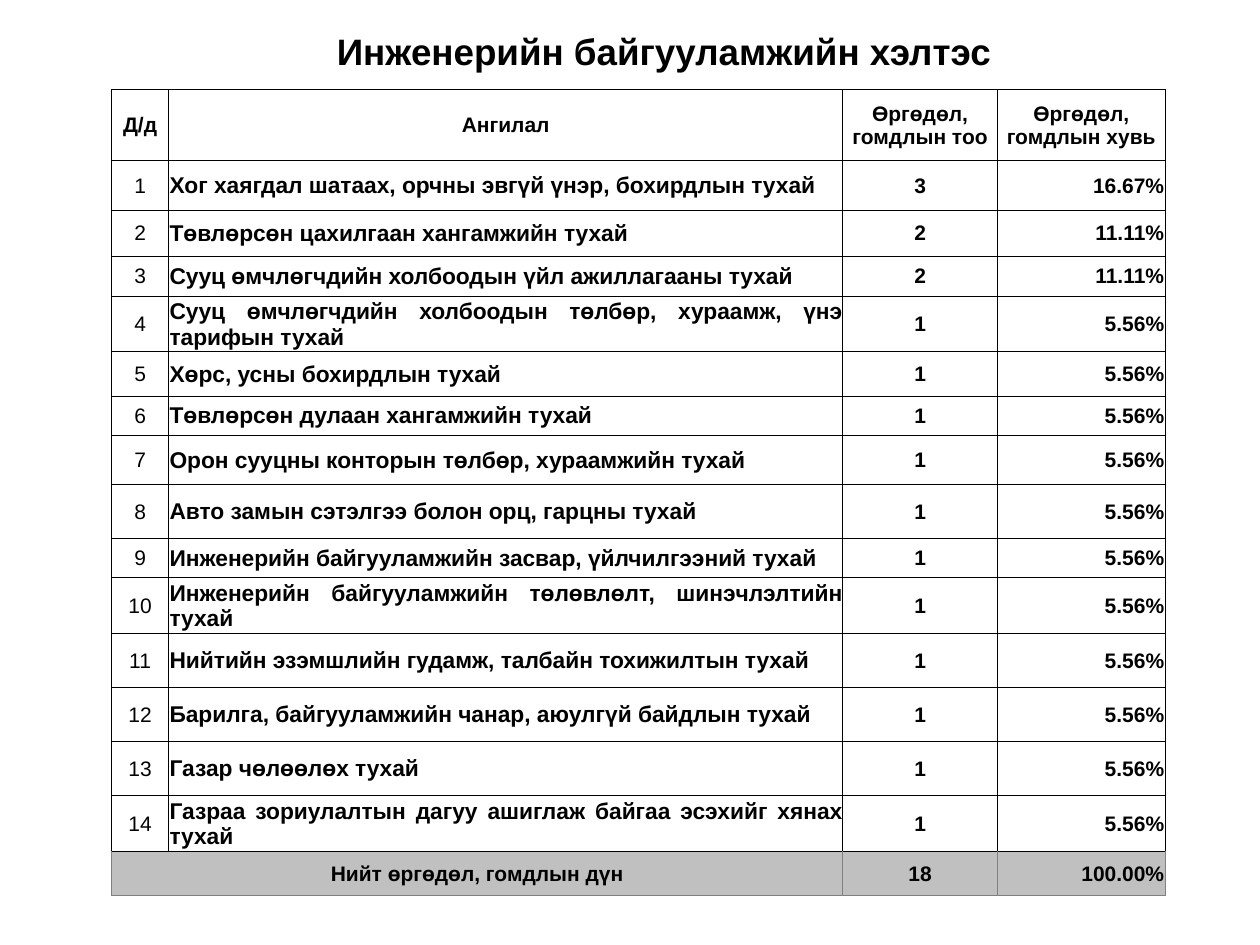
from dataclasses import dataclass

from lxml.etree import SubElement
from pptx import Presentation
from pptx.dml.color import RGBColor as Rgb
from pptx.enum.text import MSO_ANCHOR as Anchor, PP_ALIGN as Align
from pptx.oxml.ns import qn
from pptx.util import Cm, Pt


@dataclass(frozen=True)
class Theme:
    font: str = "Arial"
    text: str = "000000"
    paper: str = "FFFFFF"
    total: str = "C0C0C0"
    total_border: str = "808080"
    border_width: int = Pt(0.5)
    title_size: int = 21
    category_size: int = 13
    cell_size: int = 12


theme = Theme()


def write(paragraph, text, size, bold, alignment):
    paragraph.alignment = alignment
    run = paragraph.add_run()
    run.text = text
    run.font.name = theme.font
    run.font.size = Pt(size)
    run.font.bold = bold
    run.font.color.rgb = Rgb.from_string(theme.text)


def style_cell(cell, fill, border, top):
    properties = cell._tc.get_or_add_tcPr()
    for side, color in (("L", border), ("R", border), ("T", top), ("B", border)):
        line = SubElement(properties, qn(f"a:ln{side}"), w=str(theme.border_width))
        SubElement(SubElement(line, qn("a:solidFill")), qn("a:srgbClr"), val=color)
    cell.fill.solid()
    cell.fill.fore_color.rgb = Rgb.from_string(fill)
    cell.vertical_anchor = Anchor.MIDDLE
    cell.margin_left = cell.margin_right = cell.margin_top = Cm(0.02)
    cell.margin_bottom = 0


headers = ["Д/д", "Ангилал", "Өргөдөл, гомдлын тоо", "Өргөдөл, гомдлын хувь"]
categories = [
    ("Хог хаягдал шатаах, орчны эвгүй үнэр, бохирдлын тухай", 3),
    ("Төвлөрсөн цахилгаан хангамжийн тухай", 2),
    ("Сууц өмчлөгчдийн холбоодын үйл ажиллагааны тухай", 2),
    ("Сууц өмчлөгчдийн холбоодын төлбөр, хураамж, үнэ тарифын тухай", 1),
    ("Хөрс, усны бохирдлын тухай", 1),
    ("Төвлөрсөн дулаан хангамжийн тухай", 1),
    ("Орон сууцны конторын төлбөр, хураамжийн тухай", 1),
    ("Авто замын сэтэлгээ болон орц, гарцны тухай", 1),
    ("Инженерийн байгууламжийн засвар, үйлчилгээний тухай", 1),
    ("Инженерийн байгууламжийн төлөвлөлт, шинэчлэлтийн тухай", 1),
    ("Нийтийн эзэмшлийн гудамж, талбайн тохижилтын тухай", 1),
    ("Барилга, байгууламжийн чанар, аюулгүй байдлын тухай", 1),
    ("Газар чөлөөлөх тухай", 1),
    ("Газраа зориулалтын дагуу ашиглаж байгаа эсэхийг хянах тухай", 1),
]
total = sum(count for _, count in categories)
rows = [headers]
for number, (category, count) in enumerate(categories, 1):
    rows.append([str(number), category, str(count), f"{count / total:.2%}"])
rows.append(["Нийт өргөдөл, гомдлын дүн", "", str(total), f"{1:.2%}"])

column_widths = [1.15, 13.59, 3.12, 3.38]
row_heights = [1.42, 1.01, 0.92, 0.81, 1.05, 0.89, 0.79, 0.99, 1.09, 0.79] + [1.09] * 5 + [0.89]
left, title_top, table_top = 2.25, 0.36, 1.81
width = sum(column_widths)

presentation = Presentation()
presentation.slide_width = Cm(25.4)
presentation.slide_height = Cm(19.05)
slide = presentation.slides.add_slide(presentation.slide_layouts[6])

title = slide.shapes.add_textbox(Cm(left), Cm(title_top), Cm(width), Cm(1.45))
title_frame = title.text_frame
title_frame.word_wrap = True
title_frame.vertical_anchor = Anchor.MIDDLE
title_frame.margin_left = Cm(1.28)
title_frame.paragraphs[0].line_spacing = 0.9
write(title_frame.paragraphs[0], "Инженерийн байгууламжийн хэлтэс", theme.title_size, True, Align.CENTER)

table = slide.shapes.add_table(
    len(rows), len(headers), Cm(left), Cm(table_top), Cm(width), Cm(sum(row_heights))
).table
table.first_row = table.horz_banding = False
for column, column_width in zip(table.columns, column_widths):
    column.width = Cm(column_width)
for row, row_height in zip(table.rows, row_heights):
    row.height = Cm(row_height)

last = len(rows) - 1
table.cell(last, 0).merge(table.cell(last, 1))
body_alignments = [Align.CENTER, Align.JUSTIFY, Align.CENTER, Align.RIGHT]
for row_index, texts in enumerate(rows):
    is_total = row_index == last
    is_body = 0 < row_index < last
    fill = theme.total if is_total else theme.paper
    border = theme.total_border if is_total else theme.text
    for column_index, text in enumerate(texts):
        cell = table.cell(row_index, column_index)
        style_cell(cell, fill, border, theme.text)
        if cell.is_spanned:
            continue
        size = theme.category_size if is_body and column_index == 1 else theme.cell_size
        bold = not (is_body and column_index == 0)
        alignment = Align.CENTER if row_index == 0 else body_alignments[column_index]
        write(cell.text_frame.paragraphs[0], text, size, bold, alignment)

presentation.save("out.pptx")
